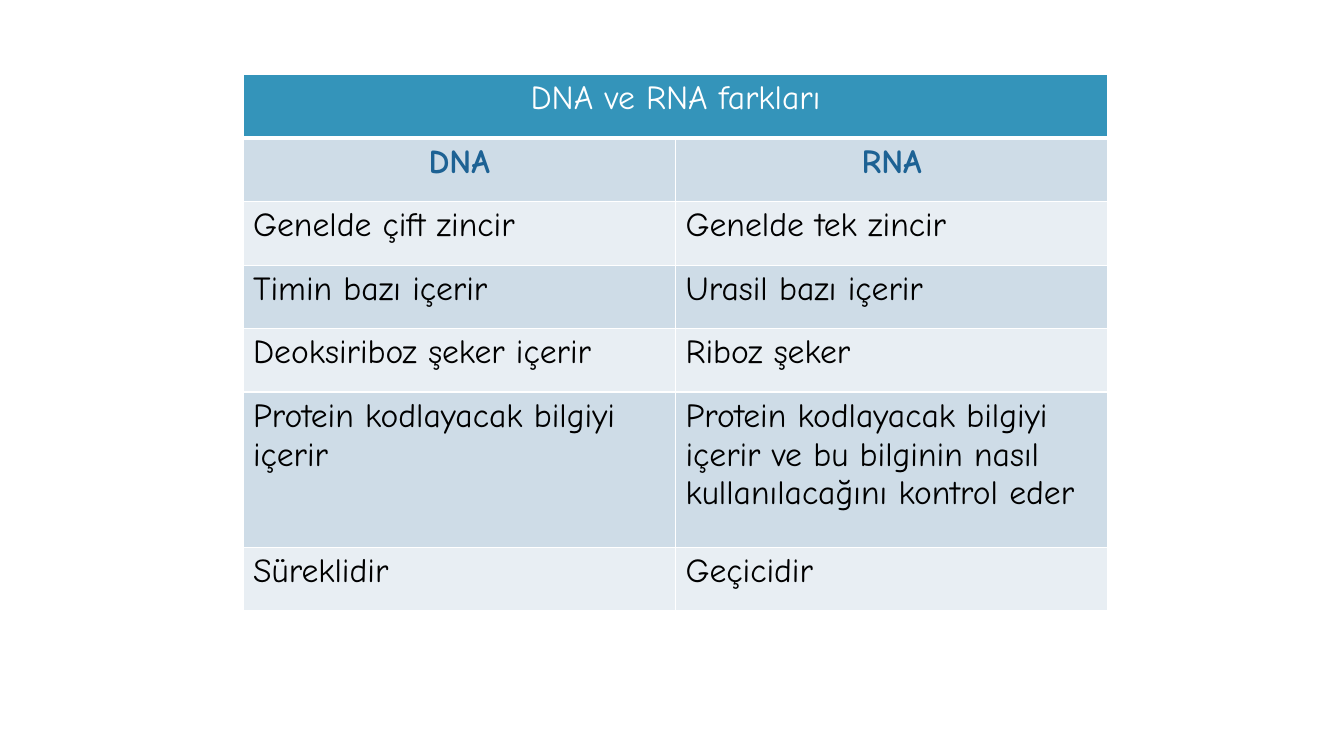
from lxml import etree
from pptx import Presentation
from pptx.dml.color import RGBColor
from pptx.enum.text import PP_ALIGN
from pptx.oxml.ns import qn
from pptx.util import Inches, Pt

LEFT, CENTER = PP_ALIGN.LEFT, PP_ALIGN.CENTER
WHITE = RGBColor(0xFF, 0xFF, 0xFF)
BLACK = RGBColor(0, 0, 0)
TEAL = RGBColor(0x34, 0x94, 0xBA)
NAVY = RGBColor(0x1D, 0x62, 0x94)
BANDS = [RGBColor(0xE8, 0xEE, 0xF3), RGBColor(0xCE, 0xDC, 0xE7)]
COL, ROW, TALL = 4.29, 0.63, 1.54


def write(cell, text, color=BLACK, bold=False, align=LEFT):
    para = cell.text_frame.paragraphs[0]
    para.alignment = align
    run = para.add_run()
    run.text = text
    font = run.font
    font.name = "Comic Neue"
    font.size = Pt(24)
    font.bold = bold
    font.color.rgb = color


def paint(cell, fill, base=1):
    props = cell._tc.get_or_add_tcPr()
    for side, width in zip("LRTB", (1, 1, 1, base)):
        line = etree.SubElement(props, qn(f"a:ln{side}"), w=str(Pt(width)))
        solid = etree.SubElement(line, qn("a:solidFill"))
        etree.SubElement(solid, qn("a:srgbClr"), val=str(WHITE))
    cell.fill.solid()
    cell.fill.fore_color.rgb = fill


pairs = [
    ("DNA", "RNA"),
    ("Genelde çift zincir", "Genelde tek zincir"),
    ("Timin bazı içerir", "Urasil bazı içerir"),
    ("Deoksiriboz şeker içerir", "Riboz şeker"),
    ("Protein kodlayacak bilgiyi içerir",
     "Protein kodlayacak bilgiyi içerir ve bu bilginin nasıl kullanılacağını kontrol eder"),
    ("Süreklidir", "Geçicidir"),
]

deck = Presentation()
deck.slide_width, deck.slide_height = Inches(13.33), Inches(7.5)
slide = deck.slides.add_slide(deck.slide_layouts[6])

count = len(pairs) + 1
frame = slide.shapes.add_table(count, 2, Inches(2.41), Inches(0.74),
                               Inches(2 * COL), Inches((count - 1) * ROW + TALL))
table = frame.table
for col in table.columns:
    col.width = Inches(COL)
for row in table.rows:
    row.height = Inches(ROW)
table.rows[5].height = Inches(TALL)

head = table.cell(0, 0)
head.merge(table.cell(0, 1))
write(head, "DNA ve RNA farkları", color=WHITE, align=CENTER)
for cell in table.rows[0].cells:
    paint(cell, TEAL, base=3)

for r, pair in enumerate(pairs, 1):
    style = {"color": NAVY, "bold": True, "align": CENTER} if r == 1 else {}
    for c, text in enumerate(pair):
        cell = table.cell(r, c)
        write(cell, text, **style)
        paint(cell, BANDS[r % 2])

deck.save("out.pptx")
